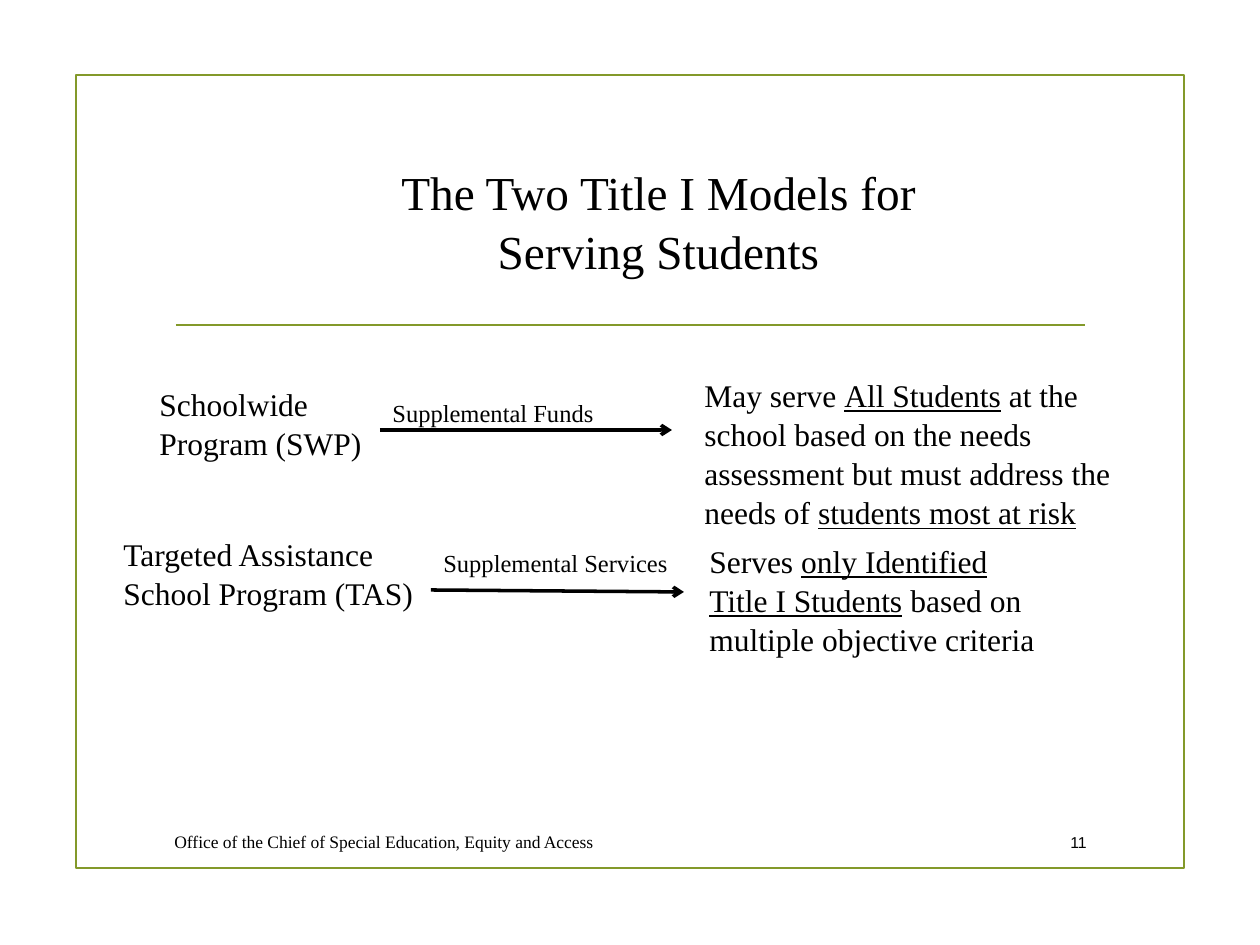
from lxml import etree
from pptx import Presentation
from pptx.dml.color import RGBColor
from pptx.enum.shapes import MSO_CONNECTOR, MSO_SHAPE
from pptx.enum.text import MSO_ANCHOR, MSO_AUTO_SIZE, PP_ALIGN
from pptx.oxml.ns import qn
from pptx.util import Emu, Pt

STRAIGHT = MSO_CONNECTOR.STRAIGHT
RECT = MSO_SHAPE.RECTANGLE
TOP, MIDDLE = MSO_ANCHOR.TOP, MSO_ANCHOR.MIDDLE
FIXED = MSO_AUTO_SIZE.NONE
LEFT, CENTER, RIGHT = PP_ALIGN.LEFT, PP_ALIGN.CENTER, PP_ALIGN.RIGHT
COLORS = {"rule": "83992A", "ink": "000000"}
SERIF, SANS = "Times New Roman", "Arial"
TITLE_ONLY = 5
SCALE = 914400 / 126


def px(*nums):
    return [Emu(round(num * SCALE)) for num in nums]


def color(name):
    return RGBColor.from_string(COLORS[name])


def write(shape, text, size, font=SERIF, align=LEFT, anchor=TOP):
    frame = shape.text_frame
    frame.word_wrap = True
    frame.auto_size = FIXED
    frame.vertical_anchor = anchor
    para = frame.paragraphs[0]
    para.alignment = align
    para.line_spacing = 1.04
    for pos, part in enumerate(text.split("_")):
        if not part:
            continue
        run = para.add_run()
        run.text = part
        run.font.name = font
        run.font.size = Pt(size)
        run.font.color.rgb = color("ink")
        if pos % 2:
            run.font.underline = True


def add_title(slide, text, box):
    title = slide.shapes.title
    title.left, title.top, title.width, title.height = px(*box)
    write(title, text, 27, align=CENTER)


def add_text(slide, text, box, size, **style):
    write(slide.shapes.add_textbox(*px(*box)), text, size, **style)


def add_frame(slide, box):
    frame = slide.shapes.add_shape(RECT, *px(*box))
    frame.shadow.inherit = False
    frame.fill.background()
    frame.line.color.rgb = color("rule")
    frame.line.width = Pt(1.25)


def add_line(slide, ends, ink, width, arrow=False):
    line = slide.shapes.add_connector(STRAIGHT, *px(*ends))
    line.line.color.rgb = color(ink)
    line.line.width = Pt(width)
    props = line._element.spPr
    if arrow:
        etree.SubElement(props.find(qn("a:ln")), qn("a:tailEnd"), type="arrow")
    etree.SubElement(props, qn("a:effectLst"))


def main():
    deck = Presentation()
    deck.slide_width, deck.slide_height = px(1260, 945)
    slide = deck.slides.add_slide(deck.slide_layouts[TITLE_ONLY])

    add_frame(slide, (76, 75, 1108, 793))
    add_line(slide, (176, 325, 1085, 325), "rule", 1.25)
    add_title(slide, "The Two Title I Models for Serving Students",
              (328, 155, 661, 127))

    models = [
        ("Schoolwide Program (SWP)", (147, 377, 233, 89)),
        ("Targeted Assistance School Program (TAS)", (111, 527, 328, 89)),
        ("May serve _All Students_ at the school based on the needs "
         "assessment but must address the needs of _students most at risk_",
         (692, 368, 486, 165)),
        ("Serves _only Identified Title I Students_ based on multiple "
         "objective criteria", (697, 534, 354, 156)),
    ]
    for text, box in models:
        add_text(slide, text, box, 18)

    flows = [
        ("Supplemental Funds", (380, 391, 284, 43), (380, 430, 672, 430)),
        ("Supplemental Services", (431, 541, 253, 43), (431, 590, 684, 592)),
    ]
    for text, box, ends in flows:
        add_text(slide, text, box, 14)
        add_line(slide, ends, "ink", 0, arrow=True)

    add_text(slide, "Office of the Chief of Special Education, Equity and Access",
             (162, 822, 703, 39), 10, anchor=MIDDLE)
    add_text(slide, "11", (1045, 822, 54, 39), 9, font=SANS, align=RIGHT,
             anchor=MIDDLE)
    deck.save("out.pptx")


if __name__ == "__main__":
    main()
